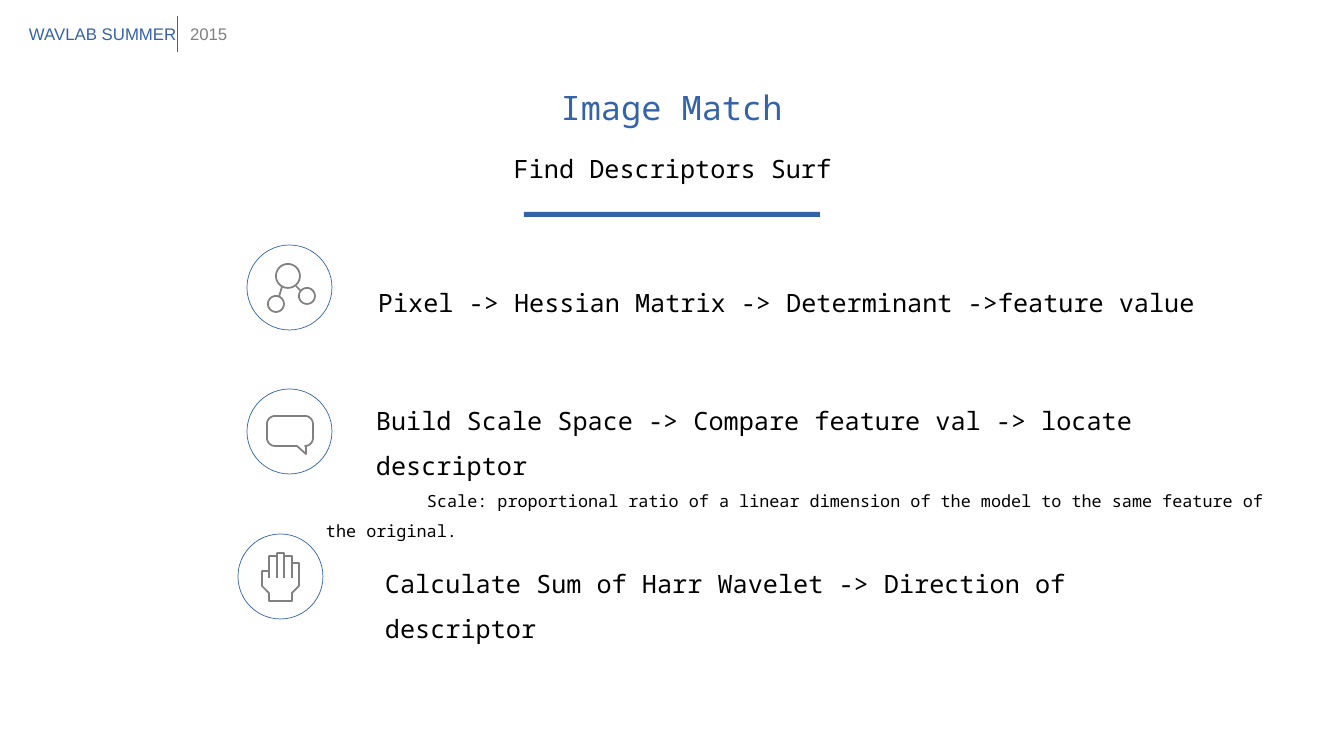
from math import cos, pi, sin
from lxml.etree import SubElement
from pptx import Presentation
from pptx.dml.color import RGBColor
from pptx.enum.shapes import MSO_CONNECTOR, MSO_SHAPE
from pptx.enum.text import MSO_AUTO_SIZE, PP_ALIGN
from pptx.oxml.ns import qn
from pptx.util import Pt

PX = 914400 / 100.8
BLUE, GREY, BLACK = "3563A8", "808080", "000000"
MONO, SANS = "Noto Sans Mono", "Arial"
THIN, ICON = 0.5, 1.25

# text, box (left, top, width, height), size, colour
HEADINGS = [
    ("Image Match", (405, 87, 533, 56), 24, BLUE),
    ("Find Descriptors Surf", (246, 153, 853, 43), 18, BLACK),
]
# box, inset, paragraphs of (text, size, left margin, first-line indent)
STEPS = [
    ((374, 268, 899, 41), 4,
     [("Pixel -> Hessian Matrix -> Determinant ->feature value", 18, 0, 0)]),
    ((326, 390, 970, 83), 0,
     [("Build Scale Space -> Compare feature val -> locate descriptor", 18, 50, 0),
      ("Scale: proportional ratio of a linear dimension of the model "
       "to the same feature of the original.", 12, 0, 101)]),
    ((335, 553, 744, 43), 0,
     [("Calculate Sum of Harr Wavelet -> Direction of descriptor", 18, 50, 0)]),
]
HEADER = [
    ("WAVLAB SUMMER", (19, 19, 172, 30), BLUE),
    ("2015", (180, 19, 64, 30), GREY),
]
HEADER_DIVIDER = (177, 16, 177, 52)
TITLE_RULE = (524, 212, 296, 5)

RING_CORNERS = [(247, 245), (247, 389), (238, 534)]
RING_SIZE = 85
NODES = [(288, 276, 12), (276, 304, 8), (307, 296, 8)]
NODE_LINKS = [[(282, 287), (279, 297)], [(296, 286), (301, 291)]]
BUBBLE = (267, 416, 313, 446)
BUBBLE_RADIUS = 8
BUBBLE_TAIL = [(306, 446), (306, 454), (297, 446)]
HAND = [(262, 571), (269, 571), (269, 556), (277, 556), (277, 553), (284, 553),
        (284, 556), (292, 556), (292, 563), (299, 563), (299, 586), (292, 593),
        (292, 601), (269, 601), (269, 593), (262, 586)]
FINGER_TOPS = [(269, 571), (277, 556), (284, 556), (292, 563)]
FINGER_BASE = 578


def emu(*lengths):
    return [round(length * PX) for length in lengths]


def rgb(color):
    return RGBColor.from_string(color)


def outline(shape, color, width):
    shape.shadow.inherit = False
    shape.fill.background()
    shape.line.color.rgb = rgb(color)
    shape.line.width = Pt(width)


def arc(x, y, radius, start, turn):
    """Points on a clockwise arc about (x, y)."""
    steps = round(turn / pi * 16)
    angles = [start + turn * step / steps for step in range(steps + 1)]
    return [(x + radius * cos(a), y + radius * sin(a)) for a in angles]


def add_icon(loops, strokes=()):
    """Draw closed loops and open strokes as one outlined shape."""
    builder = slide.shapes.build_freeform(*emu(*loops[0][0]))
    for points, closed in [(p, True) for p in loops] + [(p, False) for p in strokes]:
        start, *rest = [emu(*point) for point in points]
        if points is not loops[0]:
            builder.move_to(*start)
        builder.add_line_segments(rest, close=closed)
    outline(builder.convert_to_shape(), GREY, ICON)


def add_text(box, paragraphs, color, font, insets=(0, 0),
             align=PP_ALIGN.LEFT, spacing=None):
    frame = slide.shapes.add_textbox(*emu(*box)).text_frame
    frame.word_wrap = True
    frame.auto_size = MSO_AUTO_SIZE.SHAPE_TO_FIT_TEXT
    frame.margin_left = frame.margin_right = emu(insets[0])[0]
    frame.margin_top = frame.margin_bottom = emu(insets[1])[0]
    frame.text = "\n".join(text for text, *_ in paragraphs)
    for para, (_, size, margin, indent) in zip(frame.paragraphs, paragraphs):
        para.alignment = align
        if spacing:
            para.line_spacing = spacing
        properties = para._p.get_or_add_pPr()
        for name, length in zip(("marL", "indent"), emu(margin, indent)):
            properties.set(name, str(length))
        for span in para.runs:
            span.font.size = Pt(size)
            span.font.name = font
            span.font.color.rgb = rgb(color)


deck = Presentation()
deck.slide_width, deck.slide_height = emu(1344, 756)
slide = deck.slides.add_slide(deck.slide_layouts[6])

for text, box, size, color in HEADINGS:
    add_text(box, [(text, size, 0, 0)], color, MONO, align=PP_ALIGN.CENTER)
rule = slide.shapes.add_shape(MSO_SHAPE.RECTANGLE, *emu(*TITLE_RULE))
rule.shadow.inherit = False
rule.fill.solid()
rule.fill.fore_color.rgb = rgb(BLUE)
rule.line.fill.background()

for corner in RING_CORNERS:
    ring = slide.shapes.add_shape(MSO_SHAPE.OVAL, *emu(*corner, RING_SIZE, RING_SIZE))
    outline(ring, BLUE, THIN)

add_icon([arc(x, y, radius, 0, 2 * pi) for x, y, radius in NODES], NODE_LINKS)

left, top, right, bottom = BUBBLE
inner_left, inner_right = left + BUBBLE_RADIUS, right - BUBBLE_RADIUS
inner_top, inner_bottom = top + BUBBLE_RADIUS, bottom - BUBBLE_RADIUS
add_icon([arc(inner_left, inner_top, BUBBLE_RADIUS, pi, pi / 2)
          + arc(inner_right, inner_top, BUBBLE_RADIUS, 1.5 * pi, pi / 2)
          + arc(inner_right, inner_bottom, BUBBLE_RADIUS, 0, pi / 2)
          + BUBBLE_TAIL
          + arc(inner_left, inner_bottom, BUBBLE_RADIUS, pi / 2, pi / 2)])

add_icon([HAND], [[(x, y), (x, FINGER_BASE)] for x, y in FINGER_TOPS])

for box, inset, paragraphs in STEPS:
    add_text(box, paragraphs, BLACK, MONO, insets=(inset, inset), spacing=1.5)

divider = slide.shapes.add_connector(MSO_CONNECTOR.STRAIGHT, *emu(*HEADER_DIVIDER))
divider.line.color.rgb = rgb(BLUE)
divider.line.width = Pt(THIN)
SubElement(divider._element.spPr, qn("a:effectLst"))
for text, box, color in HEADER:
    add_text(box, [(text, 12, 0, 0)], color, SANS, insets=(10, 5))

deck.save("out.pptx")
